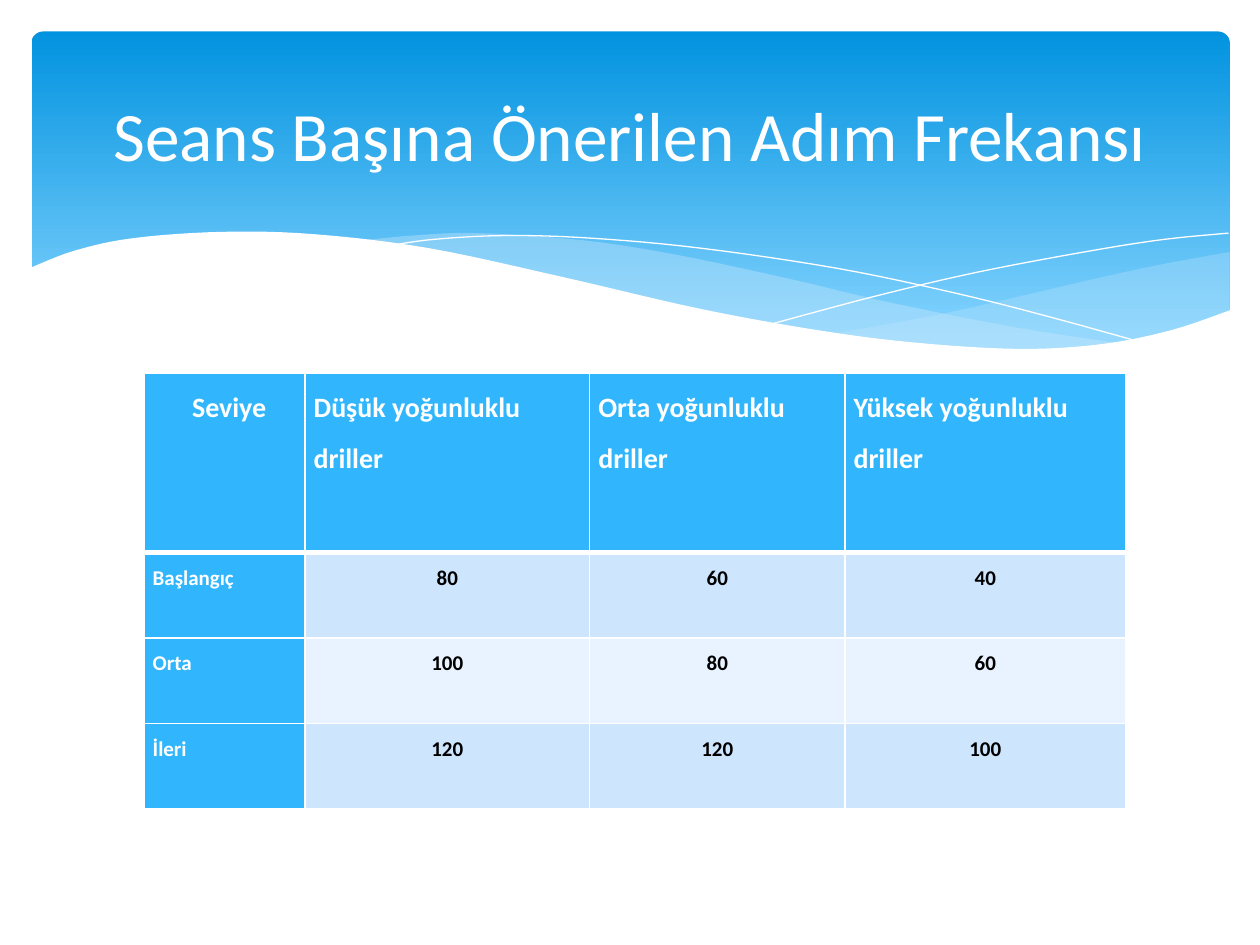
from dataclasses import dataclass

from lxml.etree import SubElement
from pptx import Presentation
from pptx.dml.color import RGBColor as RGB
from pptx.enum.shapes import MSO_SHAPE as SHAPE
from pptx.enum.text import MSO_ANCHOR as ANCHOR, PP_ALIGN as ALIGN
from pptx.oxml.ns import qn
from pptx.util import Pt


@dataclass(frozen=True)
class Theme:
    """Colours, font and type sizes of the slide."""
    font: str = "Calibri"
    white: str = "FFFFFF"
    black: str = "000000"
    sky_top: str = "0293E0"
    sky_bottom: str = "83D3FE"
    wave: str = "C6E7FC"
    accent: str = "31B6FD"
    bands: tuple = ("CEE5FE", "E8F3FF")
    title: float = 39.6
    heading: float = 16
    body: float = 12


THEME = Theme()

RIGHT_WAVE = (
    [(684.7, 126), (645, 133.2), (602, 142.6), (524, 160.6), (458, 172.8)],
    [(458, 172.8), (499.7, 177.8), (552, 181.4), (597, 180.7), (639.4, 174.2),
     (684.7, 159.8)],
)
MIDDLE_WAVE = (
    [(625, 178.6), (563, 169.2), (490.3, 154.8), (435, 141.8), (371.5, 128.2),
     (316.8, 119.5), (255.6, 115.2), (218.2, 116.6), (188, 119.5)],
    [(188, 119.5), (242.6, 128.2), (305.3, 141.8), (363.6, 154.8), (427, 167.8),
     (482.4, 176.4), (538.6, 181.4), (578.2, 182), (625, 178.6)],
)
FALLING_LINE = (
    [(204.5, 122.4), (229.7, 118.8), (270.7, 116.6), (319.7, 118.1), (382.3, 123.8),
     (460.8, 135.4), (529.2, 149.8), (580.3, 162.7), (635, 177.8)],
)
RISING_LINE = (
    [(423.4, 167), (482.4, 151.2), (540.7, 137.5), (605.5, 125.3), (647.3, 118.8),
     (684, 115.2)],
)
WHITE_WAVE = (
    [(-1.4, 135.4), (24.5, 125.3), (58.3, 118.1), (109.4, 114.5), (162, 115.9),
     (226.8, 123.8), (303.8, 140.4), (381.6, 158.4), (448.6, 170.6), (504.7, 177.8),
     (564.5, 181.4), (612, 178.6), (651.6, 170.6), (685.4, 159.1)],
    [(685.4, 219), (-1.4, 219)],
)

ROWS = [
    ["\tSeviye", "Düşük yoğunluklu driller", "Orta yoğunluklu driller",
     "Yüksek yoğunluklu driller"],
    ["Başlangıç", "80", "60", "40"],
    ["Orta", "100", "80", "60"],
    ["İleri", "120", "120", "100"],
]


def smooth(knots, steps=6):
    """Return points on a Catmull-Rom curve through the knots."""
    if len(knots) < 3:
        return knots
    ends = [knots[0], *knots, knots[-1]]
    points = []
    for quad in zip(ends, ends[1:], ends[2:], ends[3:]):
        for i in range(steps):
            t = i / steps
            points.append(tuple(
                b + t * (c - a) / 2 + t * t * (2 * a - 5 * b + 4 * c - d) / 2
                + t ** 3 * (3 * b - a - 3 * c + d) / 2
                for a, b, c, d in zip(*quad)))
    return points + [knots[-1]]


def add_curve(slide, x, y, edges, fill=None, alpha=100):
    """Draw smooth edges as a filled wave, or as a white hairline if unfilled."""
    points = [(Pt(x + px), Pt(y + py)) for edge in edges for px, py in smooth(edge)]
    builder = slide.shapes.build_freeform(*points[0])
    builder.add_line_segments(points[1:], close=fill is not None)
    sp = builder.convert_to_shape()
    sp.shadow.inherit = False
    if fill is None:
        sp.fill.background()
        sp.line.color.rgb = RGB.from_string(THEME.white)
        sp.line.width = Pt(0)
        return
    sp.line.fill.background()
    sp.fill.solid()
    sp.fill.fore_color.rgb = RGB.from_string(fill)
    if alpha < 100:
        color = sp.fill._xPr.find(".//" + qn("a:srgbClr"))
        SubElement(color, qn("a:alpha"), val=str(alpha * 1000))


def add_header(slide, x, y, w, h):
    """Draw the gradient panel and the waves that cut its lower edge."""
    sp = slide.shapes.add_shape(SHAPE.ROUNDED_RECTANGLE, Pt(x), Pt(y), Pt(w), Pt(h))
    sp.adjustments[0] = 0.034
    sp.shadow.inherit = False
    sp.line.fill.background()
    sp.fill.gradient()
    sp.fill.gradient_angle = 270
    stops = zip(sp.fill.gradient_stops, (0, 0.9), (THEME.sky_top, THEME.sky_bottom))
    for stop, position, color in stops:
        stop.position = position
        stop.color.rgb = RGB.from_string(color)
    add_curve(slide, x, y, RIGHT_WAVE, THEME.wave, 29)
    add_curve(slide, x, y, MIDDLE_WAVE, THEME.wave, 40)
    add_curve(slide, x, y, FALLING_LINE)
    add_curve(slide, x, y, RISING_LINE)
    add_curve(slide, x, y, WHITE_WAVE, THEME.white)


def style_text(p, size, color, bold=False):
    """Format every run of a paragraph."""
    for r in p.runs:
        r.font.name = THEME.font
        r.font.size = Pt(size)
        r.font.bold = bold
        r.font.color.rgb = RGB.from_string(color)


def add_title(slide, x, y, w, h):
    """Place the centred slide title."""
    tf = slide.shapes.add_textbox(Pt(x), Pt(y), Pt(w), Pt(h)).text_frame
    tf.word_wrap = True
    tf.vertical_anchor = ANCHOR.MIDDLE
    tf.text = "Seans Başına Önerilen Adım Frekansı"
    tf.paragraphs[0].alignment = ALIGN.CENTER
    style_text(tf.paragraphs[0], THEME.title, THEME.white)


def add_borders(cell, top, bottom):
    """Give a cell white borders, with its own top and bottom widths."""
    props = cell._tc.get_or_add_tcPr()
    for side, width in (("L", 1), ("R", 1), ("T", top), ("B", bottom)):
        ln = SubElement(props, qn("a:ln" + side), w=str(Pt(width)))
        SubElement(SubElement(ln, qn("a:solidFill")), qn("a:srgbClr"), val=THEME.white)


def style_cell(cell, row, col):
    """Format one cell by its place in the table."""
    head, label = row == 0, row == 0 or col == 0
    add_borders(cell, 3 if row == 1 else 1, 3 if head else 1)
    cell.fill.solid()
    color = THEME.accent if label else THEME.bands[(row - 1) % 2]
    cell.fill.fore_color.rgb = RGB.from_string(color)
    cell.margin_left = cell.margin_right = Pt(5)
    cell.margin_top = cell.margin_bottom = Pt(0)
    p = cell.text_frame.paragraphs[0]
    p.line_spacing = 1.5
    p.alignment = ALIGN.LEFT if label else ALIGN.CENTER
    tabs = SubElement(p._p.get_or_add_pPr(), qn("a:tabLst"))
    SubElement(tabs, qn("a:tab"), pos=str(Pt(22.5)), algn="l")
    style_text(p, THEME.heading if head else THEME.body,
               THEME.white if label else THEME.black, True)


def add_step_table(slide, x, y, w, h):
    """Place the table of steps by level and drill intensity."""
    shares = (0.164, 0.29, 0.26, 0.286)
    heights = (0.412, 0.196, 0.196, 0.196)
    table = slide.shapes.add_table(len(heights), len(shares),
                                   Pt(x), Pt(y), Pt(w), Pt(h)).table
    for column, share in zip(table.columns, shares):
        column.width = Pt(w * share)
    for i, (row, share) in enumerate(zip(table.rows, heights)):
        row.height = Pt(h * share)
        for j, cell in enumerate(row.cells):
            cell.text_frame.text = ROWS[i][j]
            style_cell(cell, i, j)


def main():
    """Build the slide and save it."""
    prs = Presentation()
    prs.slide_width, prs.slide_height = Pt(720), Pt(540)
    slide = prs.slides.add_slide(prs.slide_layouts[6])
    add_header(slide, 18, 18, 684.7, 194.4)
    add_step_table(slide, 82.3, 213.3, 561, 249)
    add_title(slide, 36, 27, 648, 98.6)
    prs.save("out.pptx")


if __name__ == "__main__":
    main()
